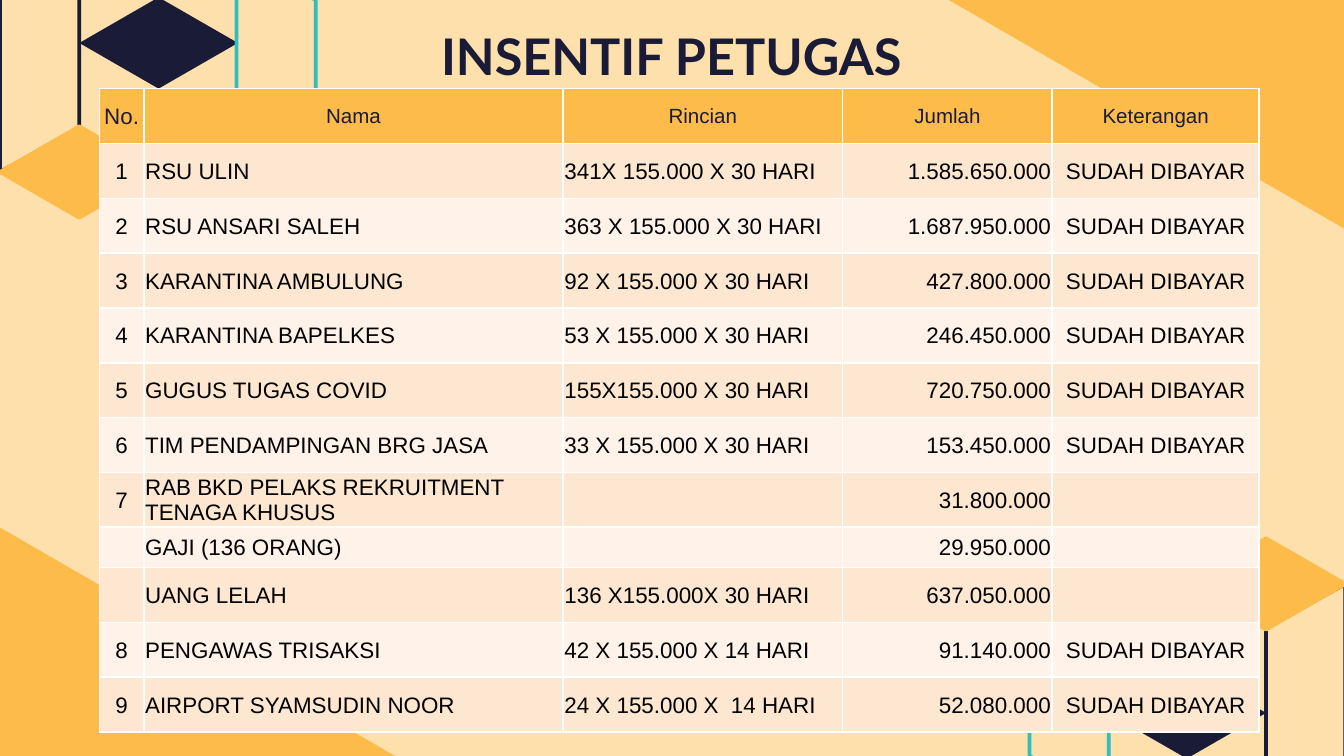
from lxml import etree
from pptx import Presentation
from pptx.dml.color import RGBColor
from pptx.enum import text
from pptx.oxml import ns
from pptx.util import Inches, Pt

COLORS = {
    "sand": "FDE0AC", "amber": "FDBC4A", "navy": "1A1B36", "teal": "31BEBE",
    "white": "FFFFFF", "black": "000000", "peach": "FEE7D0", "cream": "FFF3E9",
}
ALIGN = text.PP_ALIGN
PAID = "SUDAH DIBAYAR"
HEADINGS = ["No.", "Nama", "Rincian", "Jumlah", "Keterangan"]
INCENTIVES = [
    ("1", "RSU ULIN", "341X 155.000 X 30 HARI", "1.585.650.000", PAID),
    ("2", "RSU ANSARI SALEH", "363 X 155.000 X 30 HARI", "1.687.950.000", PAID),
    ("3", "KARANTINA AMBULUNG", "92 X 155.000 X 30 HARI", "427.800.000", PAID),
    ("4", "KARANTINA BAPELKES", "53 X 155.000 X 30 HARI", "246.450.000", PAID),
    ("5", "GUGUS TUGAS COVID", "155X155.000 X 30 HARI", "720.750.000", PAID),
    ("6", "TIM PENDAMPINGAN BRG JASA", "33 X 155.000 X 30 HARI", "153.450.000", PAID),
    ("7", "RAB BKD PELAKS REKRUITMENT TENAGA KHUSUS", "", "31.800.000", ""),
    ("", "GAJI (136 ORANG)", "", "29.950.000", ""),
    ("", "UANG LELAH", "136 X155.000X 30 HARI", "637.050.000", ""),
    ("8", "PENGAWAS TRISAKSI", "42 X 155.000 X 14 HARI", "91.140.000", PAID),
    ("9", "AIRPORT SYAMSUDIN NOOR", "24 X 155.000 X  14 HARI", "52.080.000", PAID),
]
COLUMN_WIDTHS = [0.33, 3.12, 2.08, 1.56, 1.54]
COLUMN_ALIGNS = [ALIGN.CENTER, ALIGN.LEFT, ALIGN.LEFT, ALIGN.RIGHT, ALIGN.CENTER]
SALARY_ROW, SALARY_HEIGHT = 8, 0.3


def rgb(name):
    return RGBColor.from_string(COLORS[name])


def add_polygon(slide, points, fill=None, outline=None):
    corners = [(Inches(x), Inches(y)) for x, y in points]
    builder = slide.shapes.build_freeform(*corners[0], scale=1.0)
    builder.add_line_segments(corners[1:], close=True)
    polygon = builder.convert_to_shape()
    polygon.shadow.inherit = False
    if fill:
        polygon.fill.solid()
        polygon.fill.fore_color.rgb = rgb(fill)
    else:
        polygon.fill.background()
    if outline:
        polygon.line.color.rgb = rgb(outline)
        polygon.line.width = Pt(2)
    else:
        polygon.line.fill.background()


def diamond(x, y, half_width, half_height):
    return [(x - half_width, y), (x, y - half_height),
            (x + half_width, y), (x, y + half_height)]


def add_corner_cubes(slide, corner_x, corner_y, direction):
    def place(points):
        return [(corner_x + direction * x, corner_y + direction * y) for x, y in points]

    half = (0.59, 0.34)
    navy_side = [(0, 1.28), (0.59, 0.95), (0.59, -0.41), (0, -0.07)]
    teal_side = [(2.35, 1.28), (1.76, 0.95), (1.76, -0.33), (2.35, 0)]
    add_polygon(slide, place(navy_side), outline="navy")
    add_polygon(slide, place(diamond(0.59, 1.28, *half)), "amber", "amber")
    add_polygon(slide, place(diamond(1.18, 0.32, *half)), "navy")
    add_polygon(slide, place(diamond(1.76, 1.28, *half)), "teal", "teal")
    add_polygon(slide, place(teal_side), outline="teal")


def add_backdrop(slide, width, height):
    slide.background.fill.solid()
    slide.background.fill.fore_color.rgb = rgb("sand")
    add_corner_cubes(slide, width + 0.01, height, -1)
    add_corner_cubes(slide, 0, 0, 1)
    for x, y in [(width, 0), (0, height)]:
        add_polygon(slide, diamond(x, y, 2.94, 1.7), "amber")


def place_title(slide, left, top, width, height):
    title = slide.shapes.title
    title.left, title.top = Inches(left), Inches(top)
    title.width, title.height = Inches(width), Inches(height)
    frame = title.text_frame
    frame.text = "INSENTIF PETUGAS"
    frame.word_wrap = True
    frame.auto_size = text.MSO_AUTO_SIZE.NONE
    frame.vertical_anchor = text.MSO_ANCHOR.MIDDLE
    frame.margin_left = frame.margin_right = Inches(0.1)
    frame.margin_top = frame.margin_bottom = Inches(0.1)
    heading = frame.paragraphs[0]
    heading.alignment = ALIGN.CENTER
    heading.line_spacing = 0.8
    style_font(heading.font, "Lato", 27, "navy")
    heading.font.bold = True


def style_font(font, family, size, color):
    font.name, font.size = family, Pt(size)
    font.color.rgb = rgb(color)


def add_borders(cell):
    properties = cell._tc.get_or_add_tcPr()
    for position, side in enumerate(["lnL", "lnR", "lnT", "lnB"]):
        border = etree.Element(ns.qn(f"a:{side}"), w=str(Pt(1)))
        solid = etree.SubElement(border, ns.qn("a:solidFill"))
        etree.SubElement(solid, ns.qn("a:srgbClr"), val=COLORS["white"])
        properties.insert(position, border)


def fill_cell(cell, content, alignment, size, color, fill):
    cell.text = content
    cell.vertical_anchor = text.MSO_ANCHOR.MIDDLE
    cell.margin_left = cell.margin_right = cell.margin_top = Inches(0.01)
    cell.margin_bottom = 0
    cell.fill.solid()
    cell.fill.fore_color.rgb = rgb(fill)
    entry = cell.text_frame.paragraphs[0]
    entry.alignment = alignment
    style_font(entry.font, "Arial", size, color)
    add_borders(cell)


def add_incentive_table(slide, left, top, width, height):
    row_count = len(INCENTIVES) + 1
    table = slide.shapes.add_table(
        row_count, len(HEADINGS),
        Inches(left), Inches(top), Inches(width), Inches(height)).table
    for column, column_width in zip(table.columns, COLUMN_WIDTHS):
        column.width = Inches(column_width)
    regular_height = (height - SALARY_HEIGHT) / (row_count - 1)
    for index, row in enumerate(table.rows):
        row.height = Inches(SALARY_HEIGHT if index == SALARY_ROW else regular_height)
    for column, heading in enumerate(HEADINGS):
        fill_cell(table.cell(0, column), heading, ALIGN.CENTER,
                  11 if column else 12, "navy", "amber")
    for row, incentive in enumerate(INCENTIVES, start=1):
        band = "peach" if row % 2 else "cream"
        for column, content in enumerate(incentive):
            fill_cell(table.cell(row, column), content, COLUMN_ALIGNS[column],
                      12, "black", band)


def main():
    width = 10
    height = width * 9 / 16
    deck = Presentation()
    deck.slide_width, deck.slide_height = Inches(width), Inches(height)
    slide = deck.slides.add_slide(deck.slide_layouts[5])
    add_backdrop(slide, width, height)
    place_title(slide, 2.52, -0.18, 4.95, 1.27)
    add_incentive_table(slide, 0.74, 0.66, sum(COLUMN_WIDTHS), 4.79)
    deck.save("out.pptx")


if __name__ == "__main__":
    main()
